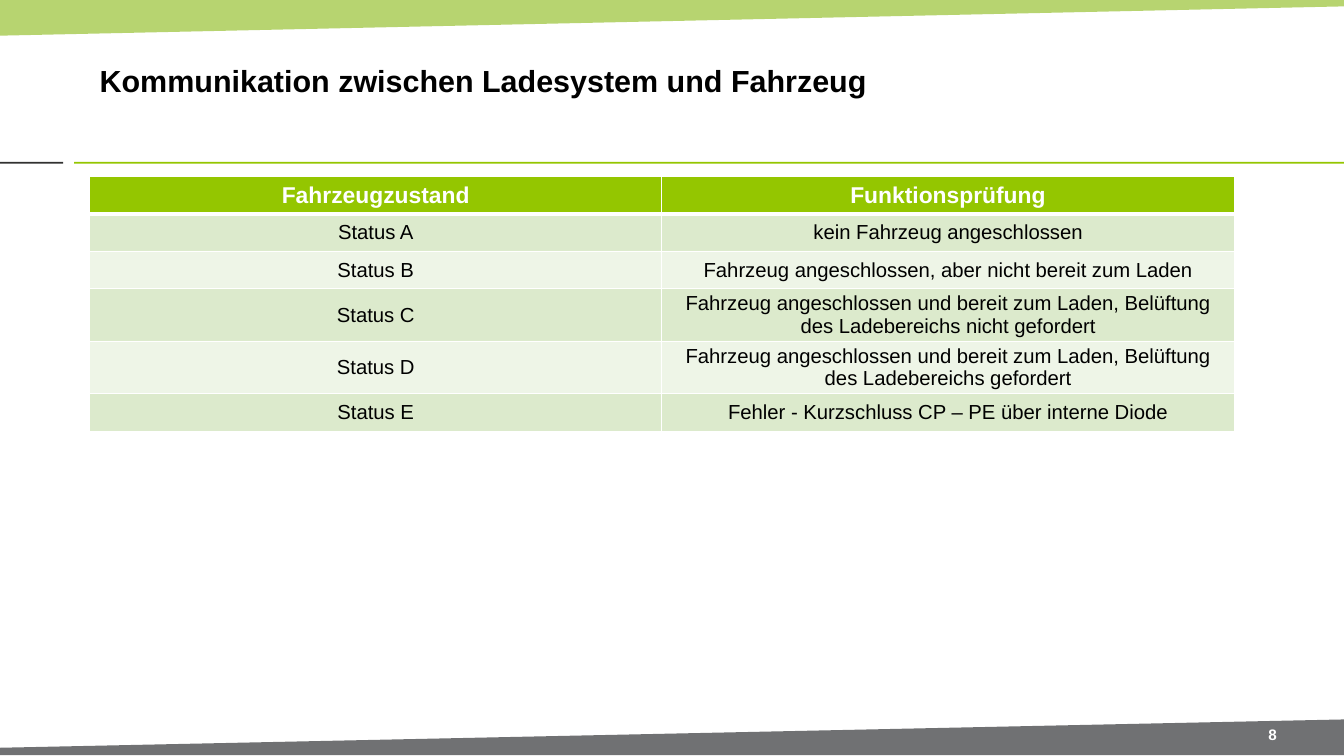
from dataclasses import dataclass

from lxml.etree import SubElement
from pptx import Presentation
from pptx.dml.color import RGBColor
from pptx.enum.shapes import MSO_SHAPE as Preset
from pptx.enum.text import MSO_ANCHOR as Anchor, MSO_AUTO_SIZE as AutoSize, PP_ALIGN as Align
from pptx.oxml.ns import qn
from pptx.util import Emu, Pt

EMU_PER_PX = 9144
WIDTH, HEIGHT = 1470, 827
FONT = "Arial"

WHITE = RGBColor(0xFF, 0xFF, 0xFF)
BLACK = RGBColor(0x00, 0x00, 0x00)
LEAF = RGBColor(0x95, 0xC0, 0x2A)
GREEN = RGBColor(0x94, 0xC6, 0x00)
CHARCOAL = RGBColor(0x31, 0x31, 0x30)
GREY = RGBColor(0x70, 0x71, 0x73)
BANDS = (RGBColor(0xDC, 0xEA, 0xCC), RGBColor(0xEE, 0xF5, 0xE7))


@dataclass(frozen=True)
class Box:
    left: int
    top: int
    width: int
    height: int

    def emu(self) -> tuple[Emu, ...]:
        return tuple(px(n) for n in (self.left, self.top, self.width, self.height))


@dataclass(frozen=True)
class Wedge:
    points: tuple[tuple[int, int], ...]
    color: RGBColor
    opacity: int = 100


@dataclass(frozen=True)
class Rule:
    box: Box
    color: RGBColor


@dataclass(frozen=True)
class TextStyle:
    size: int
    color: RGBColor
    bold: bool
    align: Align


@dataclass(frozen=True)
class Status:
    name: str
    check: str


WEDGES = (
    Wedge(((0, 0), (WIDTH, 0), (WIDTH, 7), (0, 39)), LEAF, 67),
    Wedge(((WIDTH, 826), (0, 826), (0, 818), (WIDTH, 787)), GREY),
)
RULES = (
    Rule(Box(0, 177, 69, 2), CHARCOAL),
    Rule(Box(81, 177, WIDTH - 81, 2), GREEN),
)
TITLE_BOX = Box(98, 28, 1154, 119)
NUMBER_BOX = Box(1349, 789, 86, 29)
TABLE_BOX = Box(98, 193, 1252, 246)

TITLE_STYLE = TextStyle(24, BLACK, True, Align.LEFT)
NUMBER_STYLE = TextStyle(12, WHITE, True, Align.CENTER)
HEADER_STYLE = TextStyle(18, WHITE, True, Align.CENTER)
BODY_STYLE = TextStyle(16, BLACK, False, Align.CENTER)

HEADER = Status("Fahrzeugzustand", "Funktionsprüfung")
STATUSES = (
    Status("Status A", "kein Fahrzeug angeschlossen"),
    Status("Status B", "Fahrzeug angeschlossen, aber nicht bereit zum Laden"),
    Status("Status C", "Fahrzeug angeschlossen und bereit zum Laden, "
                       "Belüftung des Ladebereichs nicht gefordert"),
    Status("Status D", "Fahrzeug angeschlossen und bereit zum Laden, "
                       "Belüftung des Ladebereichs gefordert"),
    Status("Status E", "Fehler - Kurzschluss CP – PE über interne Diode"),
)


def px(length: int) -> Emu:
    return Emu(length * EMU_PER_PX)


def paint(shape, color: RGBColor) -> None:
    shape.shadow.inherit = False
    shape.fill.solid()
    shape.fill.fore_color.rgb = color
    shape.line.fill.background()


def draw_wedge(slide, wedge: Wedge) -> None:
    start, *others = wedge.points
    builder = slide.shapes.build_freeform(*start, scale=EMU_PER_PX)
    builder.add_line_segments(others, close=True)
    shape = builder.convert_to_shape()
    paint(shape, wedge.color)
    if wedge.opacity < 100:
        color = shape.fill._xPr.find(qn("a:solidFill"))[0]
        SubElement(color, qn("a:alpha"), val=str(wedge.opacity * 1000))


def draw_rule(slide, rule: Rule) -> None:
    paint(slide.shapes.add_shape(Preset.RECTANGLE, *rule.box.emu()), rule.color)


def write(frame, text: str, style: TextStyle) -> None:
    paragraph = frame.paragraphs[0]
    paragraph.alignment = style.align
    run = paragraph.add_run()
    run.text = text
    run.font.name = FONT
    run.font.size = Pt(style.size)
    run.font.bold = style.bold
    run.font.color.rgb = style.color


def fill_text_box(shape, box: Box, text: str, style: TextStyle) -> None:
    shape.left, shape.top, shape.width, shape.height = box.emu()
    frame = shape.text_frame
    frame.word_wrap = True
    frame.auto_size = AutoSize.NONE
    frame.vertical_anchor = Anchor.MIDDLE
    frame.margin_left = frame.margin_right = px(11)
    frame.margin_top = frame.margin_bottom = px(6)
    write(frame, text, style)


def add_border(cell, side: str, points: int) -> None:
    line = SubElement(cell._tc.get_or_add_tcPr(), qn(f"a:ln{side}"), w=str(Pt(points)))
    SubElement(SubElement(line, qn("a:solidFill")), qn("a:srgbClr"), val=str(WHITE))


def fill_cell(cell, text: str, style: TextStyle, color: RGBColor, borders: dict[str, int]) -> None:
    for side, points in borders.items():
        add_border(cell, side, points)
    cell.fill.solid()
    cell.fill.fore_color.rgb = color
    cell.vertical_anchor = Anchor.MIDDLE
    cell.margin_left = cell.margin_right = px(9)
    cell.margin_top = cell.margin_bottom = px(4)
    write(cell.text_frame, text, style)


def draw_table(slide) -> None:
    rows = (HEADER, *STATUSES)
    table = slide.shapes.add_table(len(rows), 2, *TABLE_BOX.emu()).table
    for index, status in enumerate(rows):
        is_header = index == 0
        style = HEADER_STYLE if is_header else BODY_STYLE
        color = GREEN if is_header else BANDS[(index - 1) % 2]
        borders = {"L": 1, "R": 1, "T": 3 if index == 1 else 1, "B": 3 if is_header else 1}
        for column, text in enumerate((status.name, status.check)):
            fill_cell(table.cell(index, column), text, style, color, borders)


def main() -> None:
    presentation = Presentation()
    presentation.slide_width, presentation.slide_height = px(WIDTH), px(HEIGHT)
    slide = presentation.slides.add_slide(presentation.slide_layouts.get_by_name("Title Only"))
    for wedge in WEDGES:
        draw_wedge(slide, wedge)
    for rule in RULES:
        draw_rule(slide, rule)
    fill_text_box(slide.shapes.title, TITLE_BOX,
                  "Kommunikation zwischen Ladesystem und Fahrzeug", TITLE_STYLE)
    fill_text_box(slide.shapes.add_textbox(*NUMBER_BOX.emu()), NUMBER_BOX, "8", NUMBER_STYLE)
    draw_table(slide)
    presentation.save("out.pptx")


if __name__ == "__main__":
    main()
